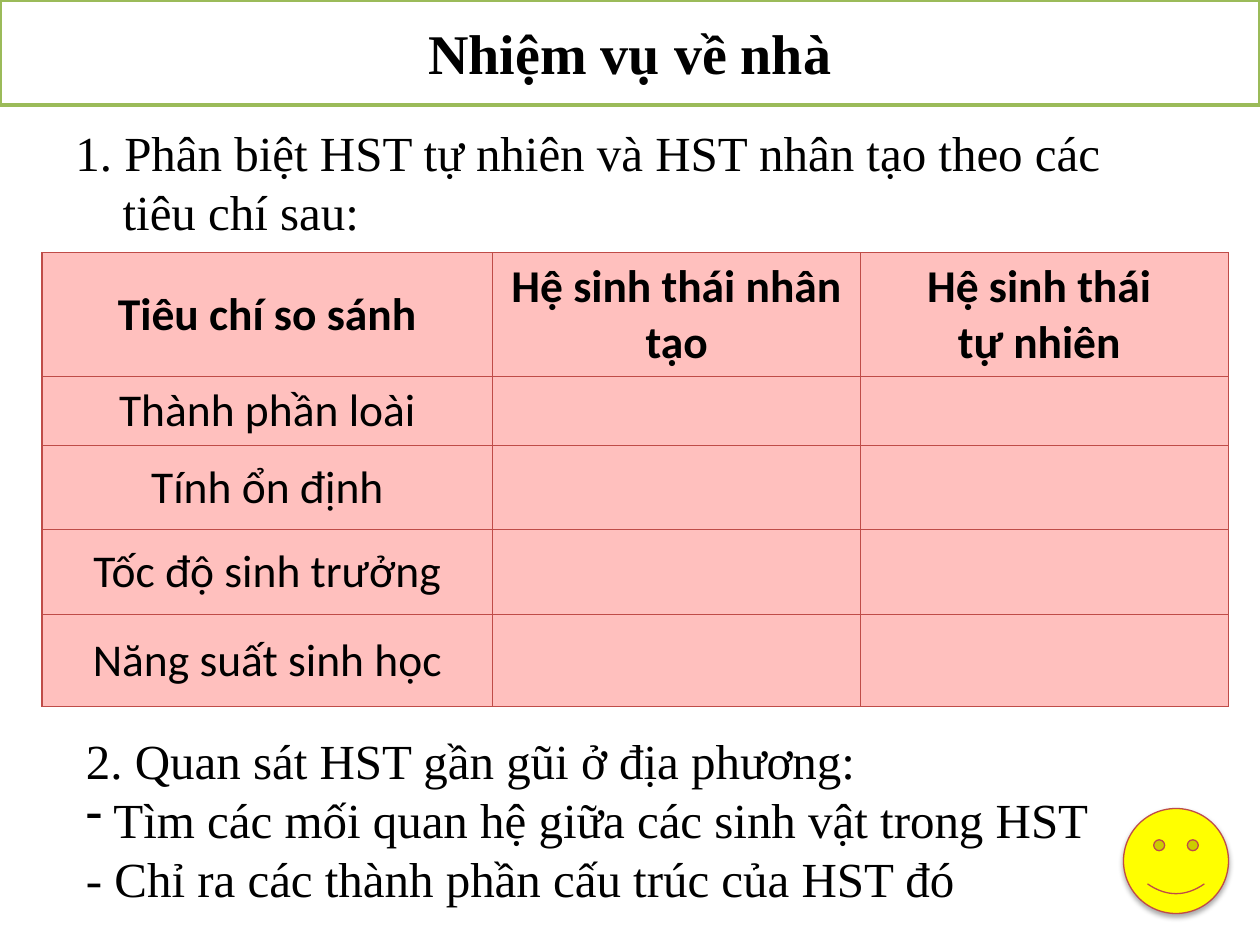
from dataclasses import dataclass

from lxml.etree import SubElement
from pptx import Presentation
from pptx.dml.color import RGBColor
from pptx.enum.shapes import MSO_SHAPE
from pptx.enum.text import MSO_ANCHOR, MSO_AUTO_SIZE, PP_ALIGN
from pptx.oxml.ns import qn
from pptx.util import Pt


@dataclass(frozen=True)
class Theme:
    text: str = "000000"
    paper: str = "FFFFFF"
    title_line: str = "9BBB59"
    table_fill: str = "FFC0BE"
    red_line: str = "BF4C48"
    smile: str = "FFFF00"
    serif: str = "Times New Roman"
    sans: str = "Calibri"
    title_size: int = 32
    body_size: int = 28
    table_size: int = 26


THEME = Theme()
HEADER = ["Tiêu chí so sánh", "Hệ sinh thái nhân tạo", "Hệ sinh thái \vtự nhiên "]
CRITERIA = ["Thành phần loài", "Tính ổn định", "Tốc độ sinh trưởng", "Năng suất sinh học"]
OBSERVATION = [
    "2. Quan sát HST gần gũi ở địa phương:",
    " Tìm các mối quan hệ giữa các sinh vật trong HST",
    "- Chỉ ra các thành phần cấu trúc của HST đó",
]


def color(value):
    return RGBColor.from_string(value)


def points(box):
    return [Pt(length) for length in box]


def style(paragraph, size, font, align=PP_ALIGN.LEFT, bold=False):
    paragraph.alignment = align
    for run in paragraph.runs:
        run.font.size = Pt(size)
        run.font.name = font
        run.font.bold = bold
        run.font.color.rgb = color(THEME.text)


def paint(shape, fill, line, width):
    shape.shadow.inherit = False
    shape.fill.solid()
    shape.fill.fore_color.rgb = color(fill)
    shape.line.color.rgb = color(line)
    shape.line.width = Pt(width)


def add_color(parent, value):
    return SubElement(parent, qn("a:srgbClr"), val=value)


def add_title(slide, box):
    banner = slide.shapes.add_shape(MSO_SHAPE.RECTANGLE, *points(box))
    paint(banner, THEME.paper, THEME.title_line, 2)
    frame = banner.text_frame
    frame.text = "Nhiệm vụ về nhà"
    frame.vertical_anchor = MSO_ANCHOR.MIDDLE
    style(frame.paragraphs[0], THEME.title_size, THEME.serif, PP_ALIGN.CENTER, True)


def add_first_task(slide, box):
    frame = slide.shapes.add_textbox(*points(box)).text_frame
    frame.word_wrap = True
    frame.text = "1. Phân biệt HST tự nhiên và HST nhân tạo theo các tiêu chí sau:"
    task = frame.paragraphs[0]
    hanging = task._p.get_or_add_pPr()
    hanging.set("marL", str(Pt(27)))
    hanging.set("indent", str(-Pt(27)))
    style(task, THEME.body_size, THEME.serif)


def format_cell(cell, bold):
    properties = cell._tc.get_or_add_tcPr()
    for side in ("lnL", "lnR", "lnT", "lnB"):
        border = SubElement(properties, qn(f"a:{side}"), w=str(Pt(0.75)))
        add_color(SubElement(border, qn("a:solidFill")), THEME.red_line)
    cell.fill.solid()
    cell.fill.fore_color.rgb = color(THEME.table_fill)
    cell.vertical_anchor = MSO_ANCHOR.MIDDLE
    style(cell.text_frame.paragraphs[0], THEME.table_size, THEME.sans, PP_ALIGN.CENTER, bold)


def add_comparison(slide, box):
    rows = [HEADER] + [[criterion, "", ""] for criterion in CRITERIA]
    table = slide.shapes.add_table(len(rows), len(HEADER), *points(box)).table
    for column, share in zip(table.columns, (0.38, 0.31, 0.31)):
        column.width = Pt(box[2] * share)
    for row, height in zip(table.rows, (70.8, 39.5, 48, 48.5, 52.5)):
        row.height = Pt(height)
    for r, texts in enumerate(rows):
        for c, text in enumerate(texts):
            cell = table.cell(r, c)
            cell.text = text
            format_cell(cell, bold=r == 0)


def add_second_task(slide, box):
    frame = slide.shapes.add_textbox(*points(box)).text_frame
    frame.word_wrap = True
    frame.auto_size = MSO_AUTO_SIZE.SHAPE_TO_FIT_TEXT
    frame.text = "\n".join(OBSERVATION)
    SubElement(frame.paragraphs[1]._p.get_or_add_pPr(), qn("a:buChar"), char="-")
    for paragraph in frame.paragraphs:
        style(paragraph, THEME.body_size, THEME.serif, PP_ALIGN.JUSTIFY)


def add_smile(slide, box):
    smile = slide.shapes.add_shape(MSO_SHAPE.SMILEY_FACE, *points(box))
    paint(smile, THEME.smile, THEME.red_line, 0.75)
    # Soft shadow straight below
    effects = smile._element.spPr.find(qn("a:effectLst"))
    shadow = SubElement(effects, qn("a:outerShdw"), blurRad=str(Pt(3.1)),
                        dist=str(Pt(1.8)), dir="5400000", rotWithShape="0")
    SubElement(add_color(shadow, THEME.text), qn("a:alpha"), val="35000")


def main():
    deck = Presentation()
    deck.slide_width, deck.slide_height = Pt(720), Pt(540)
    slide = deck.slides.add_slide(deck.slide_layouts[6])
    # Boxes are left, top, width, height
    add_title(slide, (0, 0, 720, 60))
    add_first_task(slide, (36, 66.5, 648, 76))
    add_comparison(slide, (24, 144.5, 678, 259.3))
    add_second_task(slide, (42, 414, 666, 109))
    add_smile(slide, (642, 462, 60, 60))
    deck.save("out.pptx")


if __name__ == "__main__":
    main()
